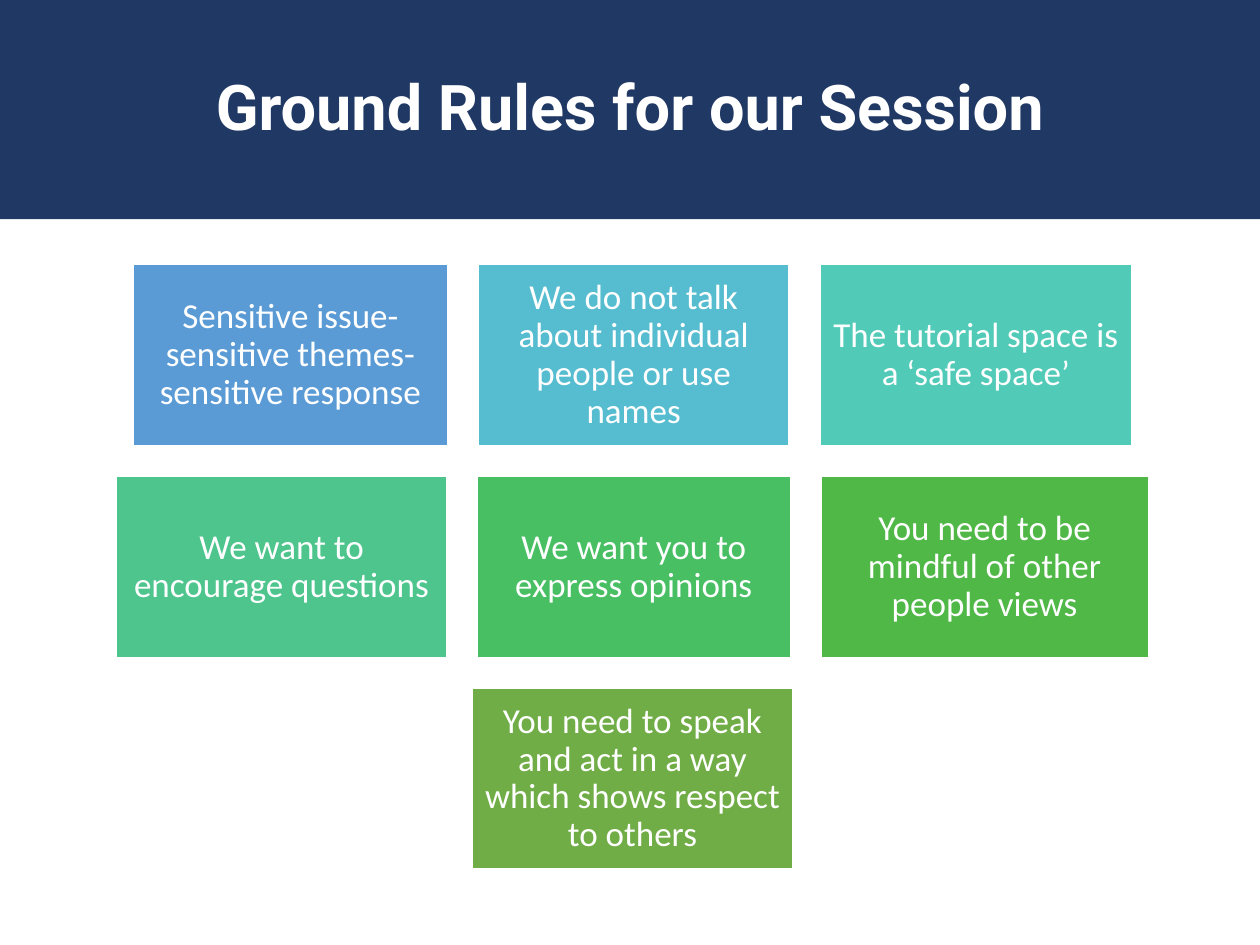
from pptx import Presentation
from pptx.dml.color import RGBColor
from pptx.enum.shapes import MSO_SHAPE
from pptx.enum.text import MSO_ANCHOR, MSO_AUTO_SIZE, PP_ALIGN
from pptx.util import Inches, Pt

RECTANGLE = MSO_SHAPE.RECTANGLE
MIDDLE = MSO_ANCHOR.MIDDLE
NO_AUTOFIT = MSO_AUTO_SIZE.NONE
CENTER = PP_ALIGN.CENTER

TITLE = "Ground Rules for our Session"
RULE_ROWS = [
    [
        ("Sensitive issue-sensitive themes-sensitive response", 2.5, "5B9BD5"),
        ("We do not talk about individual people or use names", 2.47, "56BCD0"),
        ("The tutorial space is a ‘safe space’", 2.48, "52CAB8"),
    ],
    [
        ("We want to encourage questions", 2.62, "4DC58D"),
        ("We want you to express opinions", 2.49, "49BF64"),
        ("You need to be mindful of other people views", 2.6, "50B846"),
    ],
    [("You need to speak and act in a way which shows respect to others", 2.55, "70AD47")],
]

WHITE, NAVY = "FFFFFF", "203864"
SLIDE_WIDTH, SLIDE_HEIGHT = 10, 7.5
BANNER_HEIGHT = 1.74
GRID_CENTER, GRID_TOP = 5.02, 2.1
BOX_HEIGHT, GAP = 1.44, 0.24
RULE_INSET = 0.08
TITLE_FONT = {"name": "Roboto", "size": Pt(36), "bold": True}
RULE_FONT = {"name": "Calibri", "size": Pt(20), "bold": False}


def color(value):
    return RGBColor.from_string(value)


def set_attributes(target, values):
    for name, value in values.items():
        setattr(target, name, value)


def place(shape, left, top, width, height):
    values = {"left": left, "top": top, "width": width, "height": height}
    set_attributes(shape, {name: Inches(value) for name, value in values.items()})


def fill(shape, value):
    shape.fill.solid()
    shape.fill.fore_color.rgb = color(value)


def write(shape, text, font):
    frame = shape.text_frame
    set_attributes(frame, {"word_wrap": True, "auto_size": NO_AUTOFIT, "vertical_anchor": MIDDLE})
    para = frame.paragraphs[0]
    set_attributes(para, {"alignment": CENTER, "line_spacing": 0.9})
    span = para.add_run()
    span.text = text
    set_attributes(span.font, font)
    span.font.color.rgb = color(WHITE)


def add_rule(page, text, box_color, left, top, width):
    box = page.shapes.add_shape(RECTANGLE, 0, 0, 0, 0)
    place(box, left, top, width, BOX_HEIGHT)
    box.shadow.inherit = False
    fill(box, box_color)
    box.line.color.rgb = color(WHITE)
    box.line.width = Pt(1)
    sides = ("left", "top", "right", "bottom")
    set_attributes(box.text_frame, {f"margin_{side}": Inches(RULE_INSET) for side in sides})
    write(box, text, RULE_FONT)


def main():
    deck = Presentation()
    deck.slide_width = Inches(SLIDE_WIDTH)
    deck.slide_height = Inches(SLIDE_HEIGHT)
    page = deck.slides.add_slide(deck.slide_layouts.get_by_name("Title Only"))

    title = page.shapes.title
    place(title, 0, 0, SLIDE_WIDTH, BANNER_HEIGHT)
    fill(title, NAVY)
    write(title, TITLE, TITLE_FONT)

    for row, rules in enumerate(RULE_ROWS):
        row_width = sum(width for _, width, _ in rules) + GAP * (len(rules) - 1)
        left = GRID_CENTER - row_width / 2
        top = GRID_TOP + row * (BOX_HEIGHT + GAP)
        for text, width, box_color in rules:
            add_rule(page, text, box_color, left, top, width)
            left += width + GAP

    deck.save("out.pptx")


if __name__ == "__main__":
    main()
